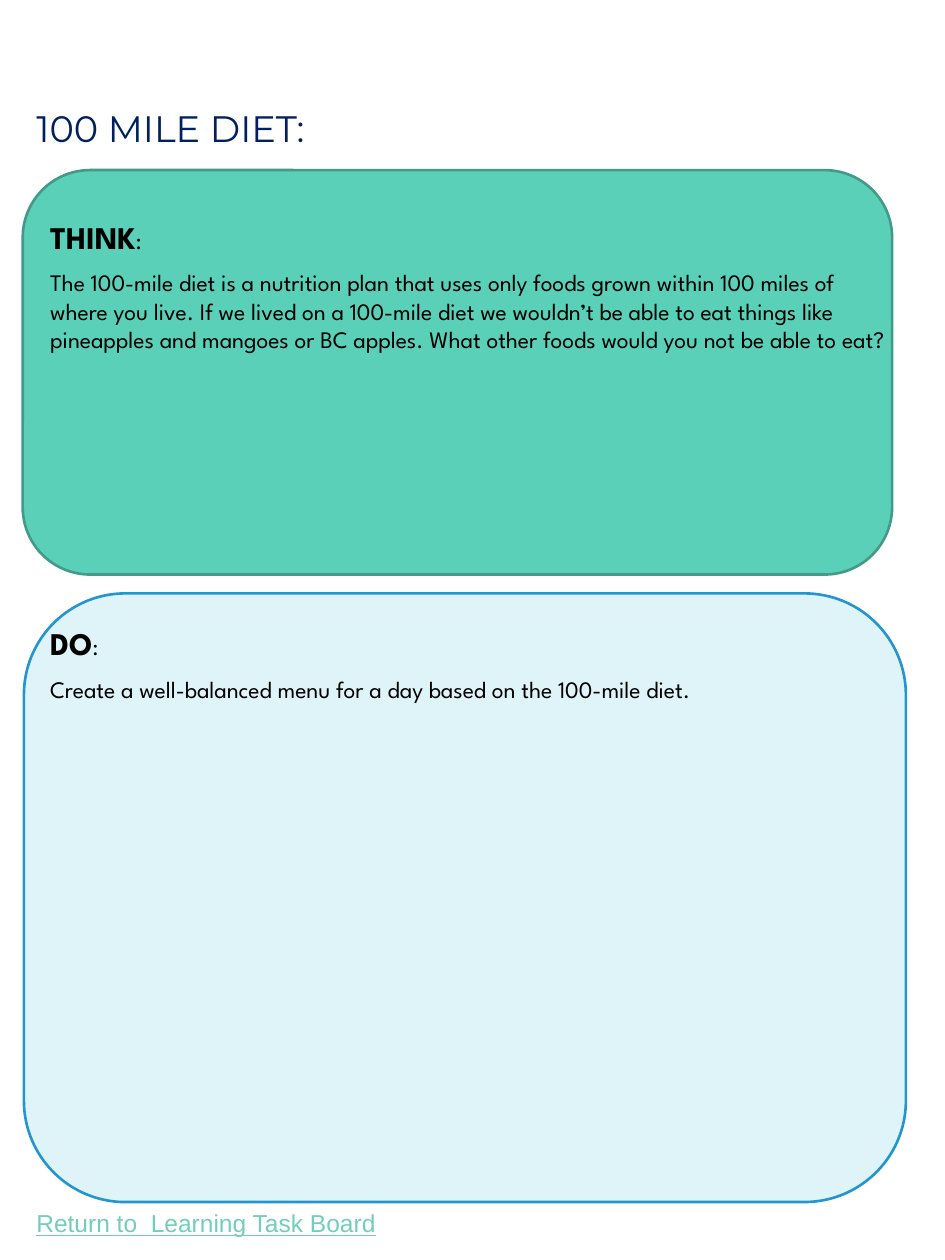
"""Build the 100 mile diet worksheet slide with its THINK and DO panels."""
from dataclasses import dataclass

from pptx import Presentation
from pptx.dml.color import RGBColor
from pptx.enum.shapes import MSO_SHAPE as Shape
from pptx.enum.text import MSO_ANCHOR as Anchor
from pptx.util import Pt

BODY_FONT = "League Spartan"
BLACK = "000000"


@dataclass(frozen=True)
class Box:
    left: float
    top: float
    width: float
    height: float


@dataclass(frozen=True)
class Span:
    text: str
    size: float
    font: str = BODY_FONT
    color: str = BLACK
    bold: bool = False
    underline: bool = False


@dataclass(frozen=True)
class Panel:
    frame: Box
    fill: str
    border: str
    heading: str
    prompt: str
    text_height: float


PANELS = [
    Panel(Box(13, 97.2, 496.8, 231.1), "5AD0B8", "439A88", "THINK",
          "The 100-mile diet is a nutrition plan that uses only foods grown within "
          "100 miles of where you live. If we lived on a 100-mile diet we wouldn’t be "
          "able to eat things like pineapples and mangoes or BC apples. What other "
          "foods would you not be able to eat?", 131.8),
    Panel(Box(13.7, 339.1, 504, 347.8), "DFF4F8", "2495CF", "DO",
          "Create a well-balanced menu for a day based on the 100-mile diet.", 79.9),
]


def place(box: Box) -> tuple:
    return Pt(box.left), Pt(box.top), Pt(box.width), Pt(box.height)


def paint(color_format, value: str) -> None:
    color_format.rgb = RGBColor.from_string(value)


def add_text(slide, box: Box, lines: list[list[Span]], anchor=Anchor.MIDDLE,
             spaced: bool = False) -> None:
    frame = slide.shapes.add_textbox(*place(box)).text_frame
    frame.word_wrap = True
    frame.vertical_anchor = anchor
    for index, spans in enumerate(lines):
        line = frame.add_paragraph() if index else frame.paragraphs[0]
        if spaced:
            line.space_before = Pt(0.2 * spans[0].size)
            line.space_after = Pt(4.5)
        for span in spans:
            run = line.add_run()
            run.text = span.text
            run.font.name = span.font
            run.font.size = Pt(span.size)
            run.font.bold = span.bold
            run.font.underline = span.underline
            paint(run.font.color, span.color)


def add_panel(slide, panel: Panel) -> None:
    card = slide.shapes.add_shape(Shape.ROUNDED_RECTANGLE, *place(panel.frame))
    card.shadow.inherit = False
    card.fill.solid()
    paint(card.fill.fore_color, panel.fill)
    paint(card.line.color, panel.border)
    card.line.width = Pt(1.5)
    lines = [[Span(panel.heading, 18, bold=True), Span(":", 13.5)],
             [Span(panel.prompt, 13.5)]]
    add_text(slide, Box(21.6, panel.frame.top, 496.1, panel.text_height), lines,
             spaced=True)


def main() -> None:
    deck = Presentation()
    deck.slide_width, deck.slide_height = Pt(540), Pt(720)
    slide = deck.slides.add_slide(deck.slide_layouts[6])
    add_text(slide, Box(13.7, 27.4, 512.6, 91.4),
             [[Span("100 MILE DIET:", 21, "Montserrat", "002060")]])
    add_text(slide, Box(13.7, 686.9, 213.8, 24.5),
             [[Span("Return to  Learning Task Board", 14, "Arial", "72CEBB",
                    underline=True)]], Anchor.TOP)
    for panel in PANELS:
        add_panel(slide, panel)
    deck.save("out.pptx")


if __name__ == "__main__":
    main()
